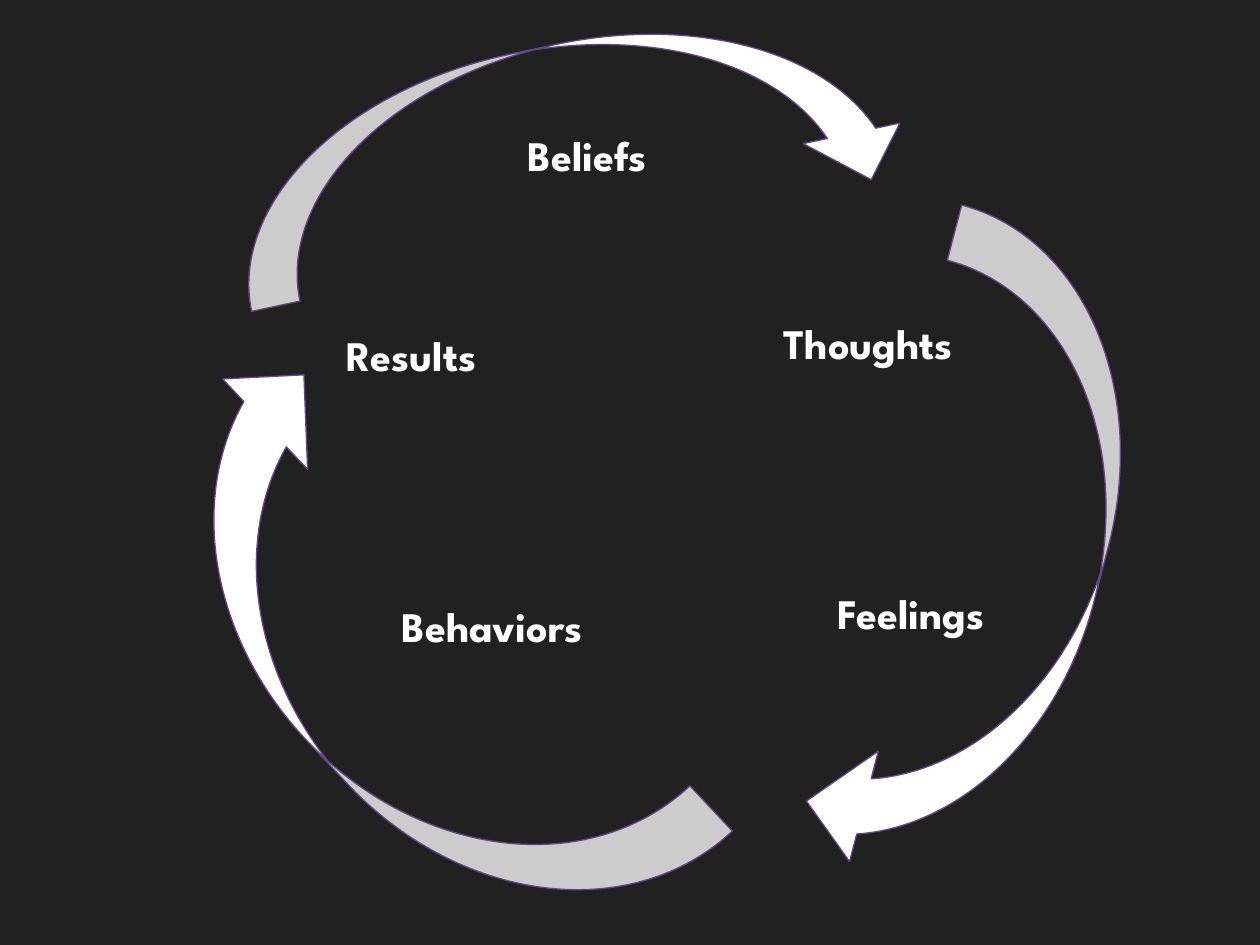
from dataclasses import dataclass

from pptx import Presentation
from pptx import util as u
from pptx.dml.color import RGBColor
from pptx.enum import shapes, text


@dataclass(frozen=True)
class Theme:
    background: str = "212121"
    foreground: str = "FFFFFF"
    outline: str = "644689"
    font: str = "League Spartan"
    label_size: float = 24
    outline_width: float = 0.75


THEME = Theme()
SLIDE_WIDTH, SLIDE_HEIGHT = 10, 7.5
LABEL_WIDTH, LABEL_HEIGHT = 2, 0.5

# Label: left, top
LABELS = {
    "Thoughts": (6.12, 2.47),
    "Feelings": (6.55, 4.61),
    "Beliefs": (4.09, 0.98),
    "Behaviors": (3.09, 4.72),
    "Results": (2.65, 2.57),
}

# Box before rotation (left, top, width, height), then degrees clockwise
ARROWS = [
    ((6.93, 1.77, 1.81, 5.34), 14.6),
    ((2.24, 2.55, 1.97, 5.46), 136.8),
    ((3.7, -1.57, 1.57, 5.42), 258),
]


def place(area, box):
    """Turn a box in slide inches into lengths within the given area."""
    left, top, width, height = area
    x_scale, y_scale = width / SLIDE_WIDTH, height / SLIDE_HEIGHT
    x, y, box_width, box_height = box
    return (
        u.Inches(left + x * x_scale),
        u.Inches(top + y * y_scale),
        u.Inches(box_width * x_scale),
        u.Inches(box_height * y_scale),
    )


def add_text(slide, position, wording, size=THEME.label_size,
             color=THEME.foreground, font=THEME.font, bold=True):
    frame = slide.shapes.add_textbox(*position).text_frame
    frame.word_wrap = True
    frame.auto_size = text.MSO_AUTO_SIZE.SHAPE_TO_FIT_TEXT
    run = frame.paragraphs[0].add_run()
    run.text = wording
    run.font.name = font
    run.font.size = u.Pt(size)
    run.font.bold = bold
    run.font.color.rgb = RGBColor.from_string(color)


def add_labels(slide, area):
    for wording, (left, top) in LABELS.items():
        box = (left, top, LABEL_WIDTH, LABEL_HEIGHT)
        add_text(slide, place(area, box), wording)


def add_arrows(slide, area):
    for box, rotation in ARROWS:
        arrow = slide.shapes.add_shape(
            shapes.MSO_SHAPE.CURVED_LEFT_ARROW, *place(area, box))
        arrow.rotation = rotation
        arrow.shadow.inherit = False
        arrow.fill.solid()
        arrow.fill.fore_color.rgb = RGBColor.from_string(THEME.foreground)
        arrow.line.color.rgb = RGBColor.from_string(THEME.outline)
        arrow.line.width = u.Pt(THEME.outline_width)


def add_cycle_slide(presentation):
    slide = presentation.slides.add_slide(presentation.slide_layouts[6])
    background = slide.background.fill
    background.solid()
    background.fore_color.rgb = RGBColor.from_string(THEME.background)

    area = (0, 0, SLIDE_WIDTH, SLIDE_HEIGHT)
    # Stages of the cycle
    add_labels(slide, area)
    # Arrows around them
    add_arrows(slide, area)


def main():
    presentation = Presentation()
    presentation.slide_width = u.Inches(SLIDE_WIDTH)
    presentation.slide_height = u.Inches(SLIDE_HEIGHT)
    add_cycle_slide(presentation)
    presentation.save("out.pptx")


if __name__ == "__main__":
    main()
